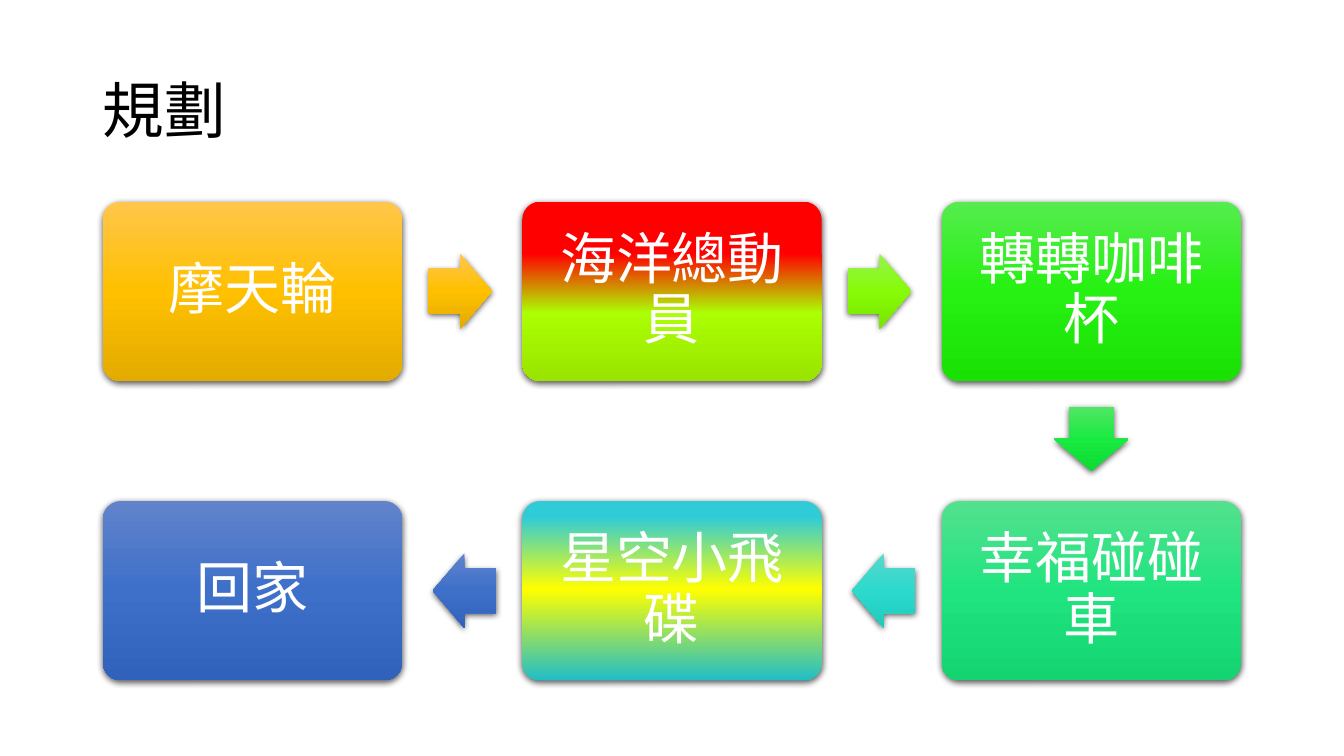
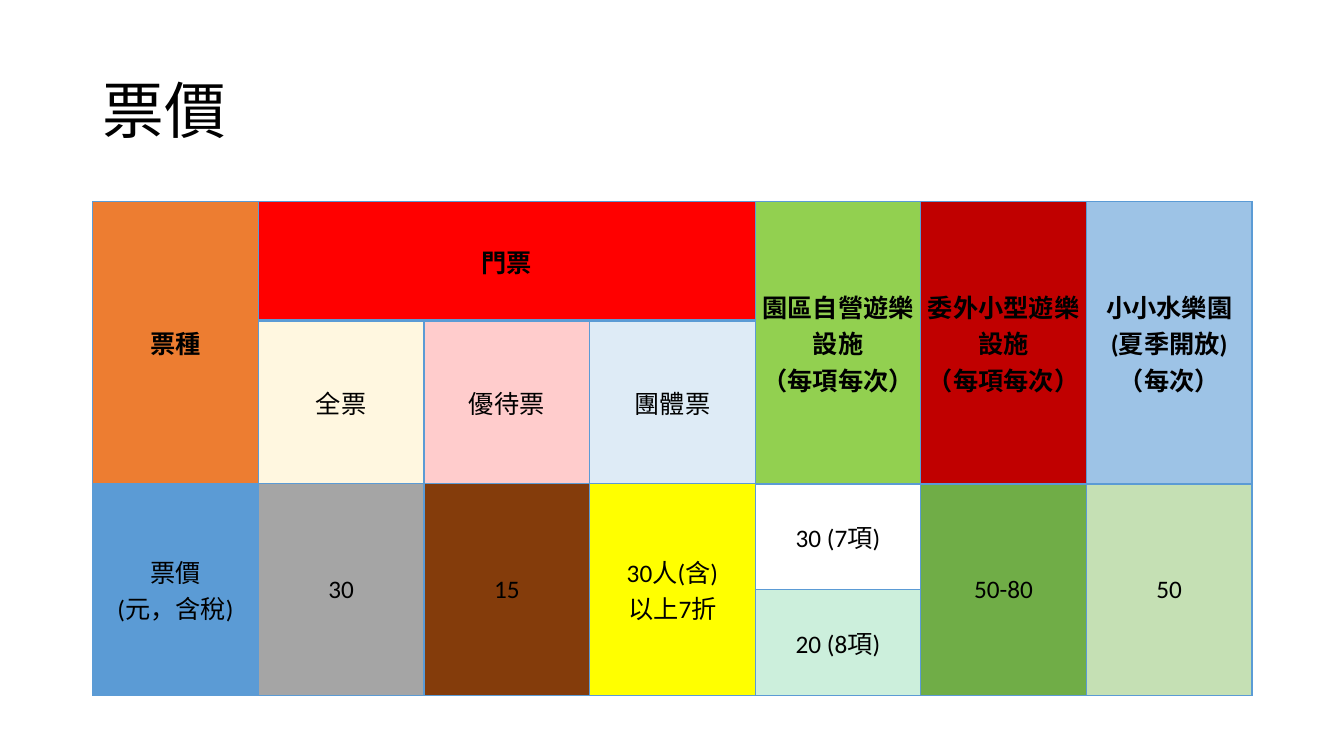
from dataclasses import dataclass
from typing import Optional

import lxml.etree
import pptx
import pptx.dml.color
import pptx.enum.shapes
import pptx.enum.text
import pptx.oxml.ns
import pptx.util

Inches = pptx.util.Inches
Pt = pptx.util.Pt
RGBColor = pptx.dml.color.RGBColor
PP_ALIGN = pptx.enum.text.PP_ALIGN
MIDDLE = pptx.enum.text.MSO_ANCHOR.MIDDLE
MSO_SHAPE = pptx.enum.shapes.MSO_SHAPE
qn = pptx.oxml.ns.qn

FONT = "Calibri"
BLACK = RGBColor(0x00, 0x00, 0x00)
WHITE = RGBColor(0xFF, 0xFF, 0xFF)
RED = RGBColor(0xFF, 0x00, 0x00)
YELLOW = RGBColor(0xFF, 0xFF, 0x00)
BLUE = RGBColor(0x5B, 0x9B, 0xD5)
ORANGE = RGBColor(0xED, 0x7D, 0x31)
LIME = RGBColor(0x92, 0xD0, 0x50)
DARK_RED = RGBColor(0xC0, 0x00, 0x00)
SKY = RGBColor(0x9D, 0xC3, 0xE6)
GOLD = RGBColor(0xFF, 0xD9, 0x66)
GRAY = RGBColor(0xA5, 0xA5, 0xA5)
BROWN = RGBColor(0x84, 0x3C, 0x0B)
GREEN = RGBColor(0x70, 0xAD, 0x47)
PALE_GREEN = RGBColor(0xC5, 0xE0, 0xB4)
EMERALD = RGBColor(0x00, 0xB0, 0x50)

Stops = tuple[tuple[int, RGBColor], ...]


def shaded(light: RGBColor, middle: RGBColor, dark: RGBColor) -> Stops:
    return (0, light), (50, middle), (100, dark)


AMBER_SHADES = shaded(RGBColor(0xFF, 0xC6, 0x4B), RGBColor(0xFF, 0xC0, 0x00), RGBColor(0xE3, 0xAB, 0x00))
LIME_SHADES = shaded(RGBColor(0x94, 0xF4, 0x4C), RGBColor(0x87, 0xFB, 0x06), RGBColor(0x78, 0xE5, 0x00))
GREEN_SHADES = shaded(RGBColor(0x55, 0xEC, 0x4E), RGBColor(0x26, 0xF1, 0x12), RGBColor(0x19, 0xE1, 0x04))
JADE_SHADES = shaded(RGBColor(0x51, 0xE6, 0x63), RGBColor(0x19, 0xEA, 0x42), RGBColor(0x0C, 0xDB, 0x34))
MINT_SHADES = shaded(RGBColor(0x53, 0xE1, 0x8E), RGBColor(0x20, 0xE4, 0x7F), RGBColor(0x13, 0xD4, 0x71))
TEAL_SHADES = shaded(RGBColor(0x58, 0xD8, 0xCC), RGBColor(0x2B, 0xDA, 0xCC), RGBColor(0x1E, 0xCB, 0xBD))
BLUE_SHADES = shaded(RGBColor(0x61, 0x83, 0xCB), RGBColor(0x3E, 0x70, 0xCA), RGBColor(0x30, 0x62, 0xBB))
OCEAN_SHADES = (29, RED), (62, RGBColor(0xAB, 0xFE, 0x03)), (100, RGBColor(0x99, 0xE4, 0x00))
STARRY_SHADES = (9, RGBColor(0x2F, 0xCC, 0xD7)), (49, YELLOW), (100, RGBColor(0x21, 0xBD, 0xC8))

STOP_LEFT, STOP_TOP = 1.02, 2.0
STOP_WIDTH, STOP_HEIGHT = 2.97, 1.78
COLUMN_PITCH, ROW_PITCH = 4.16, 2.97
ARROW_LENGTH, ARROW_BREADTH, ARROW_GAP = 0.63, 0.74, 0.26

TABLE_LEFT, TABLE_TOP, TABLE_WIDTH = 0.92, 2.0, 11.5
ROW_HEIGHTS = (1.18, 1.62, 1.05, 1.05)
COLUMN_COUNT = 7
CELL_MARGIN = 0.03


@dataclass(frozen=True)
class RideStop:
    name: str
    column: int
    row: int
    shades: Stops
    arrow_shades: Optional[Stops] = None


@dataclass(frozen=True)
class PriceCell:
    text: str
    row: int
    column: int
    color: Optional[RGBColor]
    rows: int = 1
    columns: int = 1
    header: bool = False
    opacity: int = 100


ROUTE = (
    RideStop("摩天輪", 0, 0, AMBER_SHADES, AMBER_SHADES),
    RideStop("海洋總動員", 1, 0, OCEAN_SHADES, LIME_SHADES),
    RideStop("轉轉咖啡杯", 2, 0, GREEN_SHADES, JADE_SHADES),
    RideStop("幸福碰碰車", 2, 1, MINT_SHADES, TEAL_SHADES),
    RideStop("星空小飛碟", 1, 1, STARRY_SHADES, BLUE_SHADES),
    RideStop("回家", 0, 1, BLUE_SHADES),
)

PRICES = (
    PriceCell("票種", 0, 0, ORANGE, rows=2, header=True),
    PriceCell("門票", 0, 1, RED, columns=3, header=True),
    PriceCell("園區自營遊樂設施\n（每項每次）", 0, 4, LIME, rows=2, header=True),
    PriceCell("委外小型遊樂設施\n（每項每次）", 0, 5, DARK_RED, rows=2, header=True),
    PriceCell("小小水樂園\n(夏季開放)\n（每次）", 0, 6, SKY, rows=2, header=True),
    PriceCell("全票", 1, 1, GOLD, opacity=20),
    PriceCell("優待票", 1, 2, RED, opacity=20),
    PriceCell("團體票", 1, 3, BLUE, opacity=20),
    PriceCell("票價\n(元，含稅)", 2, 0, BLUE, rows=2),
    PriceCell("30", 2, 1, GRAY, rows=2),
    PriceCell("15", 2, 2, BROWN, rows=2),
    PriceCell("30人(含)\n以上7折", 2, 3, YELLOW, rows=2),
    PriceCell("30 (7項)", 2, 4, None),
    PriceCell("50-80", 2, 5, GREEN, rows=2),
    PriceCell("50", 2, 6, PALE_GREEN, rows=2),
    PriceCell("20 (8項)", 3, 4, EMERALD, opacity=20),
)


def write_text(frame, text: str, *, size: float, color: RGBColor = BLACK, bold: bool = False,
               align: PP_ALIGN = PP_ALIGN.CENTER, line_spacing: float = 1.0) -> None:
    paragraph = frame.paragraphs[0]
    paragraph.alignment = align
    paragraph.line_spacing = line_spacing
    for number, line in enumerate(text.split("\n")):
        if number:
            paragraph.add_line_break()
        run = paragraph.add_run()
        run.text = line
        run.font.name = FONT
        run.font.size = Pt(size)
        run.font.bold = bold
        run.font.color.rgb = color


def add_child(parent, tag: str, **attributes: object):
    return lxml.etree.SubElement(parent, qn(tag), {key: str(value) for key, value in attributes.items()})


def add_title(slide, text: str) -> None:
    title = slide.shapes.add_textbox(Inches(0.92), Inches(0.4), Inches(11.5), Inches(1.45))
    title.text_frame.word_wrap = True
    title.text_frame.vertical_anchor = MIDDLE
    write_text(title.text_frame, text, size=44, align=PP_ALIGN.LEFT, line_spacing=0.9)


def add_glossy_shape(slide, preset: MSO_SHAPE, center_x: float, center_y: float,
                     width: float, height: float, shades: Stops):
    shape = slide.shapes.add_shape(preset, Inches(center_x - width / 2), Inches(center_y - height / 2),
                                   Inches(width), Inches(height))
    shape.line.fill.background()
    shape.fill.gradient()
    shape.fill.gradient_angle = 270
    properties = shape.element.spPr
    gradient = properties.find(qn("a:gradFill"))
    gradient.set("rotWithShape", "0")
    stops = gradient.find(qn("a:gsLst"))
    for old_stop in list(stops):
        stops.remove(old_stop)
    for position, color in shades:
        add_child(add_child(stops, "a:gs", pos=position * 1000), "a:srgbClr", val=color)

    shape.shadow.inherit = False
    shadow = add_child(properties.find(qn("a:effectLst")), "a:outerShdw", blurRad=Pt(4.5), dist=Pt(1.5),
                       dir=90 * 60000, algn="ctr", rotWithShape=0)
    add_child(add_child(shadow, "a:srgbClr", val=BLACK), "a:alpha", val=63000)
    return shape


def stop_center(stop: RideStop) -> tuple[float, float]:
    return (STOP_LEFT + stop.column * COLUMN_PITCH + STOP_WIDTH / 2,
            STOP_TOP + stop.row * ROW_PITCH + STOP_HEIGHT / 2)


def add_stop(slide, stop: RideStop) -> None:
    box = add_glossy_shape(slide, MSO_SHAPE.ROUNDED_RECTANGLE, *stop_center(stop),
                           STOP_WIDTH, STOP_HEIGHT, stop.shades)
    box.adjustments[0] = 0.1
    frame = box.text_frame
    frame.word_wrap = True
    frame.vertical_anchor = MIDDLE
    frame.margin_left = frame.margin_right = frame.margin_top = frame.margin_bottom = Inches(0.17)
    write_text(frame, stop.name, size=40, color=WHITE, line_spacing=0.9)


def add_arrow(slide, start: RideStop, end: RideStop) -> None:
    across, down = end.column - start.column, end.row - start.row
    x, y = stop_center(start)
    reach = ARROW_GAP + ARROW_LENGTH / 2
    arrow = add_glossy_shape(slide, MSO_SHAPE.RIGHT_ARROW,
                             x + across * (STOP_WIDTH / 2 + reach), y + down * (STOP_HEIGHT / 2 + reach),
                             ARROW_LENGTH, ARROW_BREADTH, start.arrow_shades)
    arrow.adjustments[0] = 0.6
    arrow.adjustments[1] = 0.5
    arrow.rotation = 90 if down else 90 * (1 - across)


def set_borders(cell, bottom_width: float = 1) -> None:
    properties = cell._tc.get_or_add_tcPr()
    for side, width in (("L", 1), ("R", 1), ("T", 1), ("B", bottom_width)):
        border = add_child(properties, f"a:ln{side}", w=Pt(width))
        add_child(add_child(border, "a:solidFill"), "a:srgbClr", val=BLUE)


def fill_cell(cell, color: Optional[RGBColor], opacity: int) -> None:
    if color is None:
        cell.fill.background()
        return
    cell.fill.solid()
    cell.fill.fore_color.rgb = color
    if opacity < 100:
        tint = cell._tc.tcPr.find(qn("a:solidFill")).find(qn("a:srgbClr"))
        add_child(tint, "a:alpha", val=opacity * 1000)


def add_price(table, price: PriceCell) -> None:
    cell = table.cell(price.row, price.column)
    last_row, last_column = price.row + price.rows - 1, price.column + price.columns - 1
    if price.rows * price.columns > 1:
        cell.merge(table.cell(last_row, last_column))
    for row in range(price.row, last_row + 1):
        for column in range(price.column, last_column + 1):
            part = table.cell(row, column)
            set_borders(part, 2 if price.header and row == price.row else 1)
            fill_cell(part, price.color, price.opacity)
    cell.vertical_anchor = MIDDLE
    cell.margin_left = cell.margin_right = cell.margin_top = cell.margin_bottom = Inches(CELL_MARGIN)
    write_text(cell.text_frame, price.text, size=18, bold=price.header)


def build_route(slide) -> None:
    add_title(slide, "規劃")
    for stop in ROUTE:
        add_stop(slide, stop)
    for start, end in zip(ROUTE, ROUTE[1:]):
        add_arrow(slide, start, end)


def build_prices(slide) -> None:
    add_title(slide, "票價")
    table = slide.shapes.add_table(len(ROW_HEIGHTS), COLUMN_COUNT, Inches(TABLE_LEFT), Inches(TABLE_TOP),
                                   Inches(TABLE_WIDTH), Inches(sum(ROW_HEIGHTS))).table
    table.first_row = False
    table.horz_banding = False
    for column in table.columns:
        column.width = Inches(TABLE_WIDTH / COLUMN_COUNT)
    for row, height in zip(table.rows, ROW_HEIGHTS):
        row.height = Inches(height)
    for price in PRICES:
        add_price(table, price)


def main() -> None:
    presentation = pptx.Presentation()
    presentation.slide_width = Inches(13.33)
    presentation.slide_height = Inches(7.5)
    blank = presentation.slide_layouts[6]
    for build in (build_route, build_prices):
        build(presentation.slides.add_slide(blank))
    presentation.save("out.pptx")


if __name__ == "__main__":
    main()
